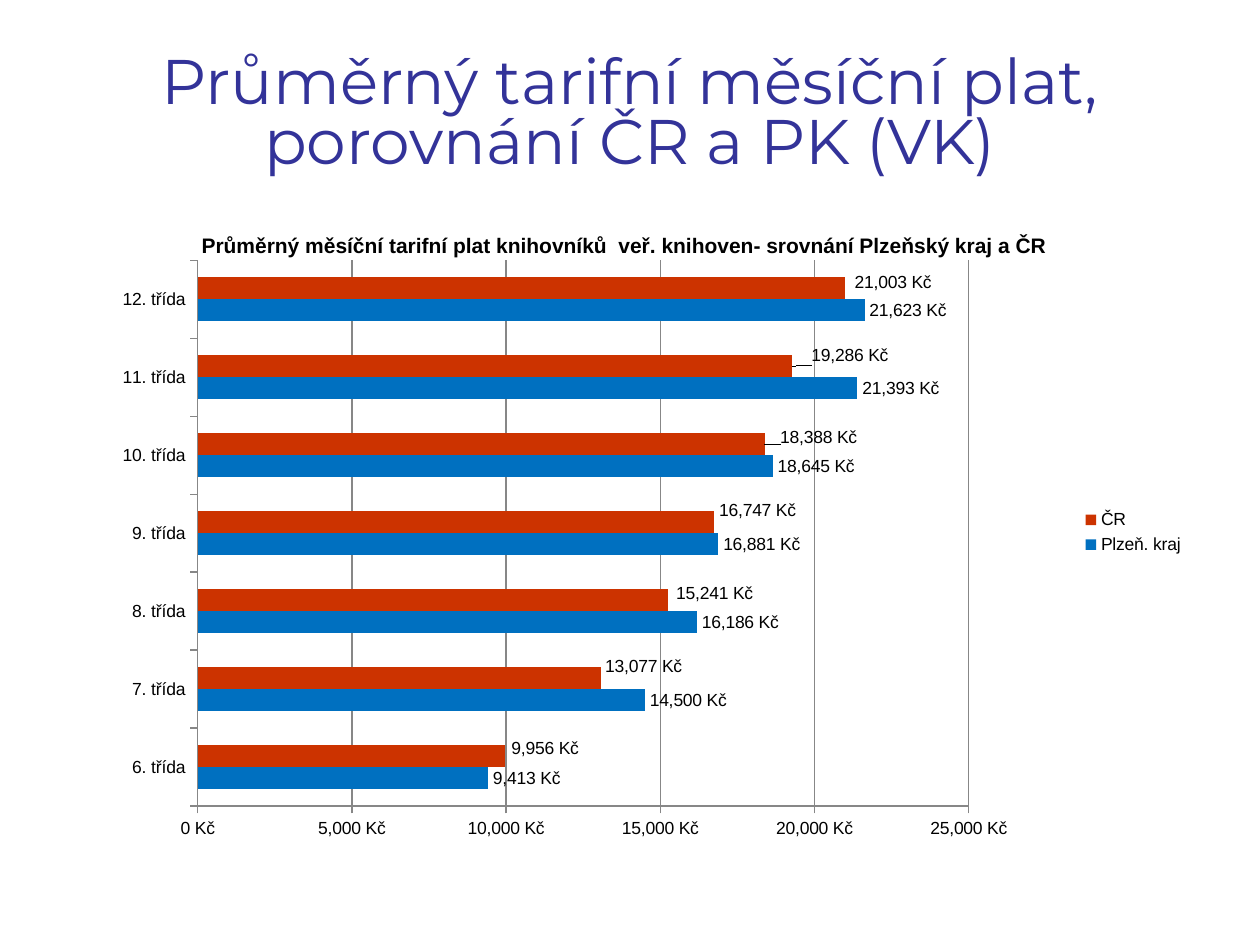
from lxml import etree
from pptx import Presentation
from pptx.chart.data import CategoryChartData
from pptx.dml.color import RGBColor
from pptx.enum.chart import (XL_CHART_TYPE, XL_LABEL_POSITION,
                             XL_LEGEND_POSITION, XL_TICK_MARK)
from pptx.enum.text import MSO_ANCHOR, PP_ALIGN
from pptx.oxml.ns import qn
from pptx.util import Pt

BAR = XL_CHART_TYPE.BAR_CLUSTERED
END = XL_LABEL_POSITION.OUTSIDE_END
RIGHT = XL_LEGEND_POSITION.RIGHT
OUT = XL_TICK_MARK.OUTSIDE
MIDDLE = MSO_ANCHOR.MIDDLE
CENTER = PP_ALIGN.CENTER

HEAD = "Průměrný tarifní měsíční plat, porovnání ČR a PK (VK)"
NAME = ("Průměrný měsíční tarifní plat knihovníků  veř. knihoven- "
        "srovnání Plzeňský kraj a ČR")
GRADES = [f"{n}. třída" for n in range(6, 13)]
PAY = {
    "Plzeň. kraj": [9413, 14500, 16186, 16881, 18644, 21393, 21623],
    "ČR": [9956, 13077, 15241, 16747, 18388, 19286, 21003],
}
PAY["Plzeň. kraj"][4] = 18645
SHIFTS = [(1, -4.5), (-0.5, -6.5), (2, -3.5), (0, -6.5),
          (6, -3.5), (8, -6), (2.5, -3)]
COLORS = {"head": "333399", "text": "000000", "line": "878787",
          "Plzeň. kraj": "0070C0", "ČR": "CC3300"}
FORMAT = '#,##0\\ "Kč"'
WIDE, HIGH = 648, 356.4


def color(key):
    return RGBColor.from_string(COLORS[key])


def write(text, frame, size, font, tint, bold=False, align=None, space=None):
    para = frame.paragraphs[0]
    para.alignment = align
    para.line_spacing = space
    run = para.add_run()
    run.text = text
    run.font.size = Pt(size)
    run.font.name = font
    run.font.bold = bold
    run.font.color.rgb = color(tint)


def place(node, index, x, y, w=None, h=None, edge=True):
    for old in node.findall(qn("c:layout")):
        node.remove(old)
    layout = etree.Element(qn("c:layout"))
    manual = etree.SubElement(layout, qn("c:manualLayout"))
    items = []
    if w:
        items.append(("layoutTarget", "inner"))
    if edge:
        items += [("xMode", "edge"), ("yMode", "edge")]
    items += [("x", x / WIDE), ("y", y / HIGH)]
    if w:
        items += [("w", w / WIDE), ("h", h / HIGH)]
    for tag, val in items:
        etree.SubElement(manual, qn(f"c:{tag}"), val=str(val))
    node.insert(index, layout)


def style(axis):
    axis.major_tick_mark = OUT
    axis.format.line.color.rgb = color("line")
    axis.format.line.width = Pt(0.75)


def draw(slide):
    data = CategoryChartData(number_format=FORMAT)
    data.categories = GRADES
    for name, vals in PAY.items():
        data.add_series(name, vals)
    chart = slide.shapes.add_chart(
        BAR, Pt(36), Pt(126), Pt(WIDE), Pt(HIGH), data).chart
    chart.font.size = Pt(10)
    chart.font.name = "Arial"
    chart.font.color.rgb = color("text")

    chart.has_title = True
    title = chart.chart_title
    write(NAME, title.text_frame, size=12, font="Arial", tint="text", bold=True)
    title.include_in_layout = True
    place(title._element, 1, 77, 5)

    chart.has_legend = True
    chart.legend.position = RIGHT
    chart.legend.include_in_layout = False

    style(chart.category_axis)
    axis = chart.value_axis
    style(axis)
    axis.minimum_scale, axis.maximum_scale, axis.major_unit = 0, 25000, 5000
    axis.tick_labels.number_format = FORMAT
    axis.tick_labels.number_format_is_linked = False
    axis.has_major_gridlines = True
    grid = axis.major_gridlines.format.line
    grid.color.rgb = color("line")
    grid.width = Pt(0.75)

    plot = chart.plots[0]
    plot.gap_width = 150
    plot.vary_by_categories = False
    for row in plot.series:
        row.format.fill.solid()
        row.format.fill.fore_color.rgb = color(row.name)
        row.invert_if_negative = False
        labels = row.data_labels
        labels.show_value = True
        labels.number_format = FORMAT
        labels.number_format_is_linked = False
        labels.position = END
    for i, (x, y) in enumerate(SHIFTS):
        row.points[i].data_label.position = END
    for node, (x, y) in zip(labels._element.findall(qn("c:dLbl")), SHIFTS):
        place(node, 1, x, y, edge=False)
    area = chart._chartSpace.find(f".//{qn('c:plotArea')}")
    place(area, 0, 77, 22.8, 440.6, 311.9)


def main():
    deck = Presentation()
    deck.slide_width, deck.slide_height = Pt(720), Pt(540)
    slide = deck.slides.add_slide(deck.slide_layouts[6])
    box = slide.shapes.add_textbox(Pt(36), Pt(21.6), Pt(648), Pt(90))
    frame = box.text_frame
    frame.word_wrap = True
    frame.vertical_anchor = MIDDLE
    write(HEAD, frame, size=36, font="Montserrat", tint="head",
          align=CENTER, space=0.8)
    draw(slide)
    deck.save("out.pptx")


if __name__ == "__main__":
    main()
